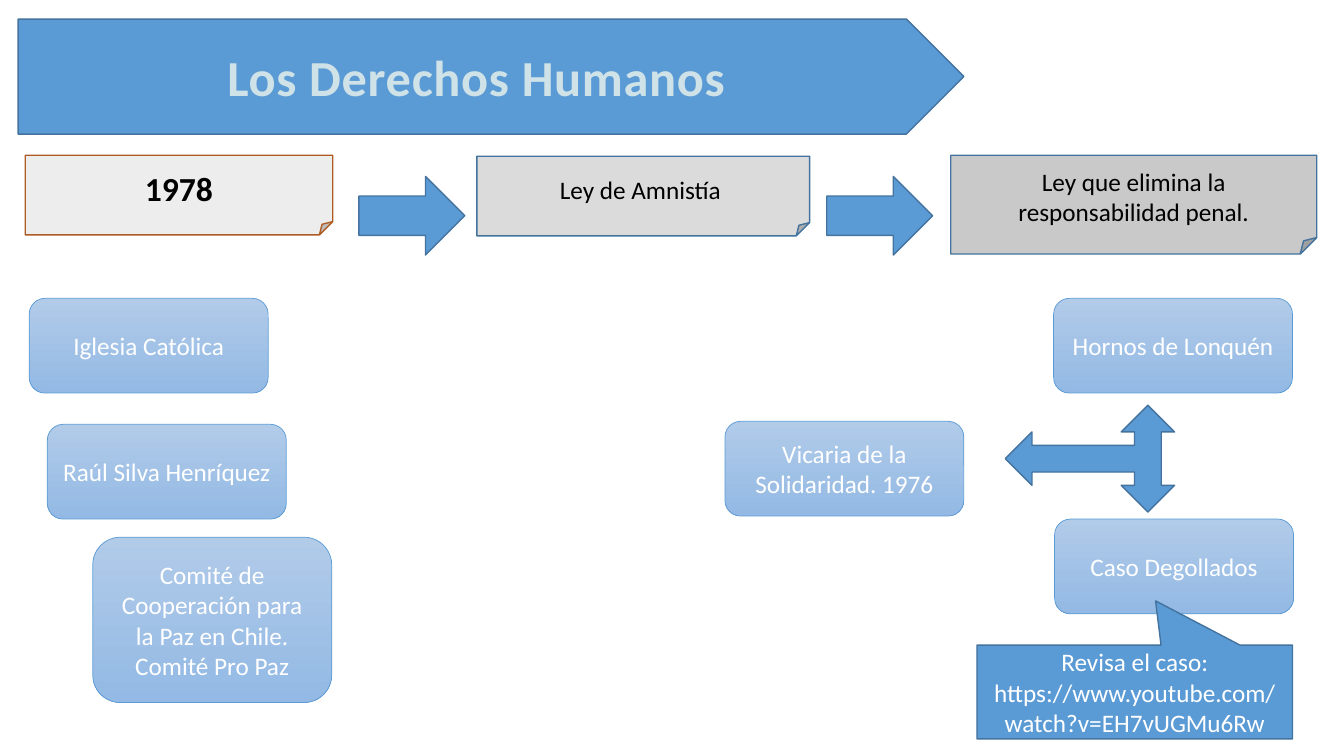
from pptx import Presentation
from pptx.dml.color import RGBColor
from pptx.enum.shapes import MSO_SHAPE
from pptx.enum.text import MSO_ANCHOR, PP_ALIGN
from pptx.util import Inches, Pt

COLORS = {
    "blue": "5B9BD5",
    "blue_edge": "43739E",
    "title": "CFE2E7",
    "white": "FFFFFF",
    "black": "000000",
    "year_fill": "EDEDED",
    "year_edge": "AF5C24",
    "law_fill": "DBDBDB",
    "effect_fill": "C9C9C9",
    "card_top": "B1CBE9",
    "card_bottom": "93B9E4",
}


def color(name):
    """Return the named colour."""
    return RGBColor.from_string(COLORS[name])


def write_text(box, text, size=18, fill="white", bold=False, spacing=0):
    """Write one centred paragraph in a shape."""
    frame = box.text_frame
    frame.word_wrap = True
    frame.vertical_anchor = MSO_ANCHOR.MIDDLE
    para = frame.paragraphs[0]
    para.alignment = PP_ALIGN.CENTER
    span = para.add_run()
    span.text = text
    span.font.name = "Calibri"
    span.font.size = Pt(size)
    span.font.bold = bold
    span.font.color.rgb = color(fill)
    if spacing:
        span.font._element.set("spc", str(int(spacing * 100)))


def add_box(page, kind, place, fill="blue", edge="blue_edge", width=1):
    """Add a filled and outlined preset shape."""
    box = page.shapes.add_shape(kind, *[Inches(length) for length in place])
    box.shadow.inherit = False
    box.fill.solid()
    box.fill.fore_color.rgb = color(fill)
    box.line.color.rgb = color(edge)
    box.line.width = Pt(width)
    return box


def add_note(page, place, text, fill, edge="blue_edge", **text_format):
    """Add a folded-corner note with dark text."""
    note = add_box(page, MSO_SHAPE.FOLDED_CORNER, place, fill, edge)
    write_text(note, text, fill="black", **text_format)


def add_card(page, left, top, text, height=0.94):
    """Add a rounded card with a vertical gradient."""
    place = (left, top, 2.37, height)
    card = add_box(page, MSO_SHAPE.ROUNDED_RECTANGLE, place, edge="blue", width=0.5)
    card.fill.gradient()
    card.fill.gradient_angle = 270
    for stop, name in zip(card.fill.gradient_stops, ("card_top", "card_bottom")):
        stop.color.rgb = color(name)
    write_text(card, text)


def main():
    """Build and save the slide."""
    deck = Presentation()
    deck.slide_width = Inches(13.33)
    deck.slide_height = Inches(7.5)
    page = deck.slides.add_slide(deck.slide_layouts[6])

    banner = add_box(page, MSO_SHAPE.PENTAGON, (0.18, 0.19, 9.38, 1.14))
    write_text(banner, "Los Derechos Humanos", size=36, fill="title", bold=True, spacing=0.5)

    add_note(page, (0.25, 1.54, 3.05, 0.79), "1978", "year_fill", "year_edge", size=24, bold=True)
    add_note(page, (4.73, 1.55, 3.3, 0.79), "Ley de Amnistía ", "law_fill")
    add_note(page, (9.43, 1.54, 3.63, 0.98), "Ley que elimina la responsabilidad penal.", "effect_fill")
    for left in (3.56, 8.2):
        add_box(page, MSO_SHAPE.RIGHT_ARROW, (left, 1.75, 1.05, 0.78))

    add_card(page, 0.29, 2.96, "Iglesia Católica")
    add_card(page, 0.47, 4.21, "Raúl Silva Henríquez")
    add_card(page, 0.92, 5.33, "Comité de Cooperación para la Paz en Chile. Comité Pro Paz", height=1.64)
    add_card(page, 7.19, 4.18, "Vicaria de la Solidaridad. 1976")
    add_card(page, 10.45, 2.96, "Hornos de Lonquén")
    add_card(page, 10.46, 5.15, "Caso Degollados")

    branch = add_box(page, MSO_SHAPE.LEFT_RIGHT_UP_ARROW, (10.28, 3.71, 1.06, 1.68))
    branch.rotation = 270

    callout = add_box(page, MSO_SHAPE.RECTANGULAR_CALLOUT, (9.69, 6.4, 3.13, 0.93))
    callout.adjustments[0] = 0.066
    callout.adjustments[1] = -0.972
    write_text(callout, "Revisa el caso: https://www.youtube.com/watch?v=EH7vUGMu6Rw")

    deck.save("out.pptx")


if __name__ == "__main__":
    main()
